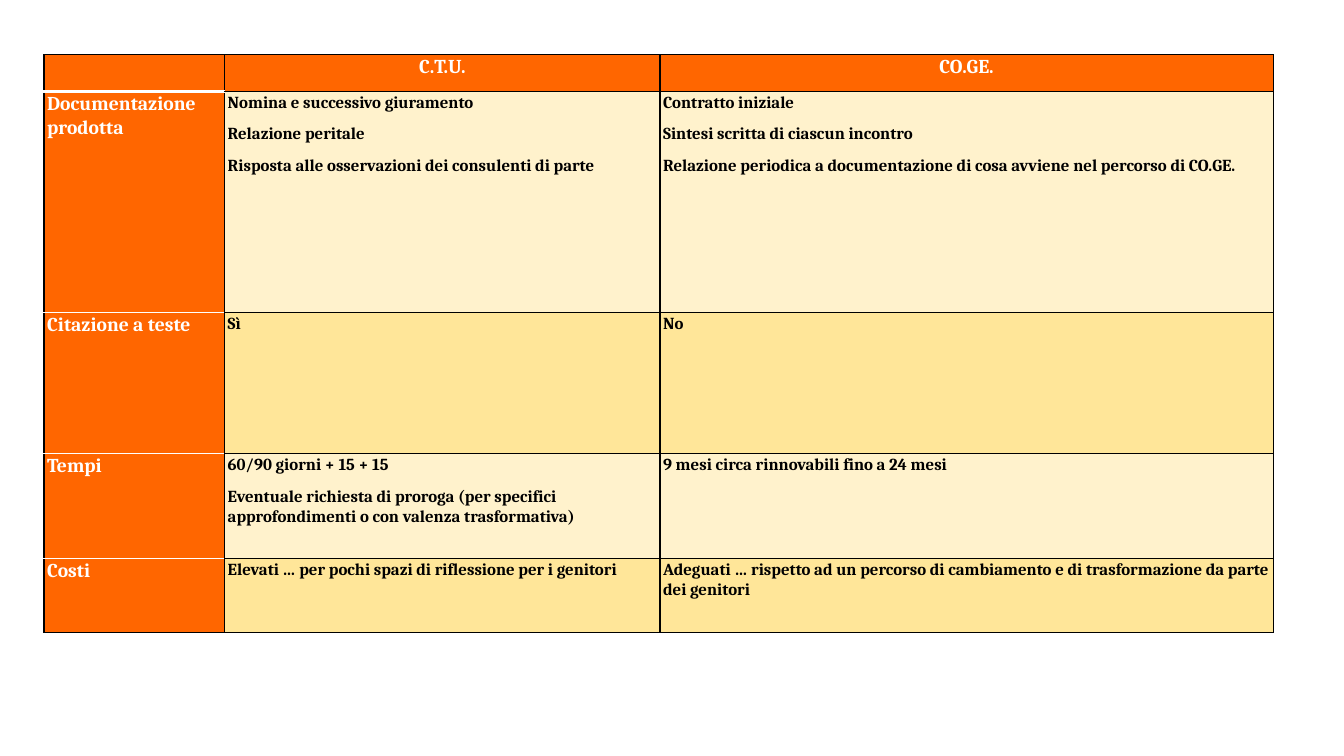
from dataclasses import dataclass

from lxml.etree import SubElement
from pptx import Presentation
from pptx.dml.color import RGBColor
from pptx.enum.text import PP_ALIGN as Align
from pptx.oxml.ns import qn
from pptx.table import _Cell as Cell
from pptx.util import Pt

ORANGE, CREAM, SAND = "FF6600", "FFF2CC", "FFE699"
BLACK, WHITE = "000000", "FFFFFF"
FONT = "Cambria"
COLUMN_WIDTHS = (129, 311, 438)
HEADER_HEIGHT = 26.4
BLANK_LAYOUT = 6


@dataclass
class Topic:
    label: str
    height: float
    ctu: list[str]
    coge: list[str]


@dataclass
class Border:
    color: str = BLACK
    width: float = 1


HEADINGS = ("", "C.T.U.", "CO.GE.")
TOPICS = [
    Topic("Documentazione prodotta", 158,
          ["Nomina e successivo giuramento", "Relazione peritale",
           "Risposta alle osservazioni dei consulenti di parte"],
          ["Contratto iniziale", "Sintesi scritta di ciascun incontro",
           "Relazione periodica a documentazione di cosa avviene nel percorso di CO.GE."]),
    Topic("Citazione a teste", 100.7, ["Sì"], ["No"]),
    Topic("Tempi", 75,
          ["60/90 giorni + 15 + 15",
           "Eventuale richiesta di proroga (per specifici approfondimenti "
           "o con valenza trasformativa)"],
          ["9 mesi circa rinnovabili fino a 24 mesi"]),
    Topic("Costi", 52.8,
          ["Elevati … per pochi spazi di riflessione per i genitori"],
          ["Adeguati … rispetto ad un percorso di cambiamento e di "
           "trasformazione da parte dei genitori"]),
]


def rgb(color: str) -> RGBColor:
    return RGBColor.from_string(color)


def write(cell: Cell, lines: list[str], *, size: float = 12, color: str = BLACK,
          align: Align = Align.LEFT) -> None:
    """Fill a cell with one bold paragraph per line."""
    frame = cell.text_frame
    for index, line in enumerate(lines):
        para = frame.add_paragraph() if index else frame.paragraphs[0]
        para.alignment = align
        para.line_spacing = 1.07
        para.space_after = Pt(8)
        span = para.add_run()
        span.text = line
        span.font.name = FONT
        span.font.size = Pt(size)
        span.font.bold = True
        span.font.color.rgb = rgb(color)


def style_cell(cell: Cell, fill: str, top: Border, bottom: Border) -> None:
    """Set margins, borders and fill; the sides are always black."""
    cell.margin_left = cell.margin_right = Pt(2.2)
    cell.margin_top = cell.margin_bottom = Pt(0)
    properties = cell._tc.get_or_add_tcPr()
    sides = {"L": Border(), "R": Border(), "T": top, "B": bottom}
    for side, border in sides.items():
        line = SubElement(properties, qn(f"a:ln{side}"), w=str(Pt(border.width)))
        solid = SubElement(line, qn("a:solidFill"))
        SubElement(solid, qn("a:srgbClr"), val=border.color)
    cell.fill.solid()
    cell.fill.fore_color.rgb = rgb(fill)


def main() -> None:
    deck = Presentation()
    deck.slide_width, deck.slide_height = Pt(960), Pt(540)
    page = deck.slides.add_slide(deck.slide_layouts[BLANK_LAYOUT])

    # Table grid
    heights = [HEADER_HEIGHT] + [topic.height for topic in TOPICS]
    table = page.shapes.add_table(
        len(heights), len(COLUMN_WIDTHS), Pt(31.5), Pt(39),
        Pt(sum(COLUMN_WIDTHS)), Pt(sum(heights))).table
    for column, width in zip(table.columns, COLUMN_WIDTHS):
        column.width = Pt(width)
    for row, height in zip(table.rows, heights):
        row.height = Pt(height)

    # Header row, with a thick white line under the empty corner
    black, white, thick = Border(), Border(WHITE), Border(WHITE, 3)
    for index, heading in enumerate(HEADINGS):
        cell = table.cell(0, index)
        style_cell(cell, ORANGE, black, black if index else thick)
        if heading:
            write(cell, [heading], size=14, color=WHITE, align=Align.CENTER)

    # Topic rows: white lines between labels, banded answers
    for index, topic in enumerate(TOPICS, start=1):
        label = table.cell(index, 0)
        style_cell(label, ORANGE, thick if index == 1 else white,
                   black if index == len(TOPICS) else white)
        write(label, [topic.label], size=14, color=WHITE)
        for column, lines in enumerate((topic.ctu, topic.coge), start=1):
            answer = table.cell(index, column)
            style_cell(answer, CREAM if index % 2 else SAND, black, black)
            write(answer, lines)

    deck.save("out.pptx")


if __name__ == "__main__":
    main()
